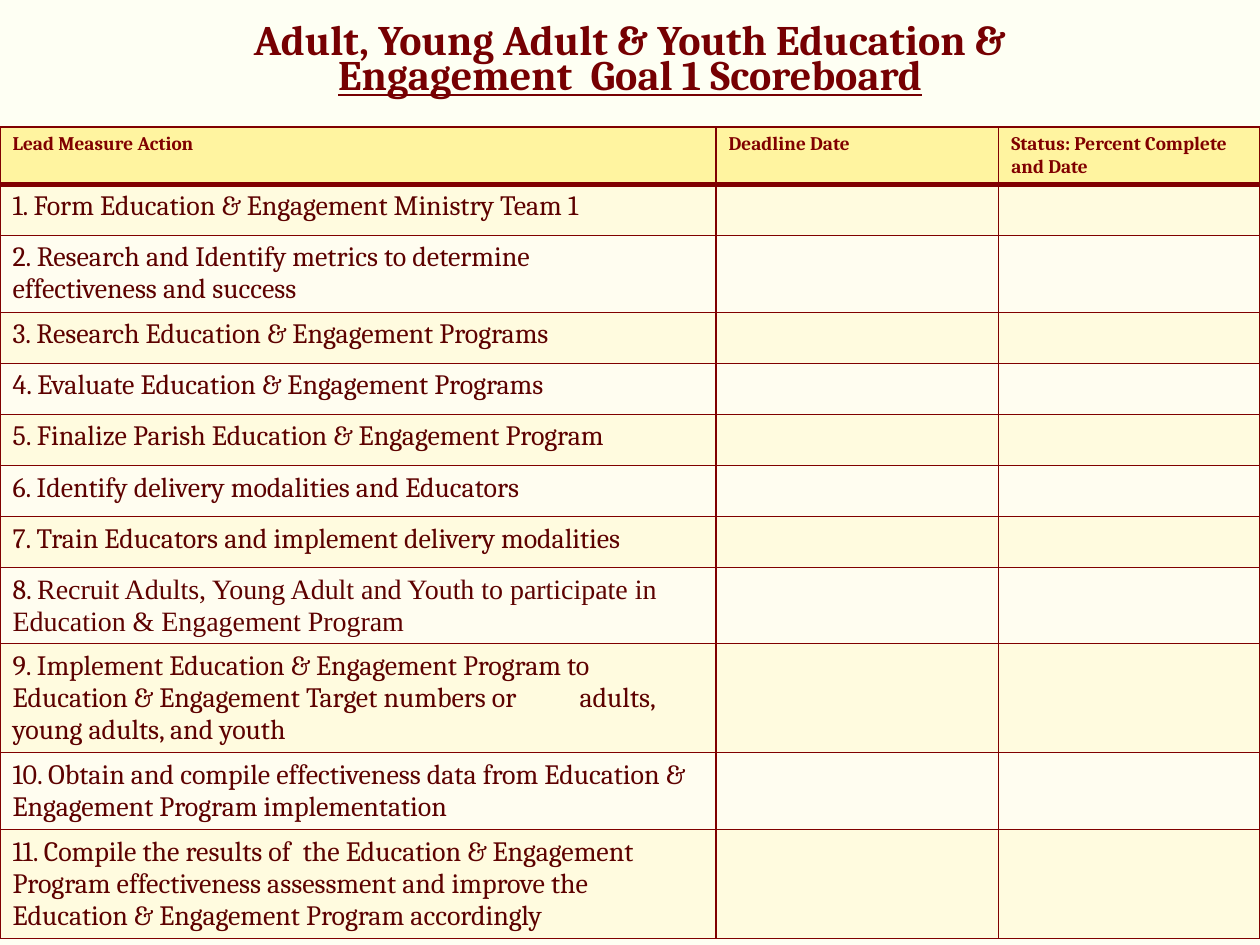
from lxml.etree import SubElement as Sub
from pptx import Presentation
from pptx.dml.color import RGBColor
from pptx.enum.text import MSO_ANCHOR as Anchor, MSO_AUTO_SIZE as Auto, PP_ALIGN as Align
from pptx.oxml.ns import qn
from pptx.util import Pt

FONT = "Cambria"
HEADS = ["Lead Measure Action", "Deadline Date", "Status: Percent Complete and Date"]
# Each action: its text and its tab stops in points
ACTIONS = [
    ("1. Form Education & Engagement Ministry Team 1", []),
    ("2. Research and Identify metrics to determine \teffectiveness and success", [36.7]),
    ("3. Research Education & Engagement Programs", []),
    ("4. Evaluate Education & Engagement Programs", []),
    ("5. Finalize Parish Education & Engagement Program", []),
    ("6. Identify delivery modalities and Educators", []),
    ("7. Train Educators and implement delivery modalities", []),
    ("8. |Recruit Adults, Young Adult and Youth to participate in "
     "\tEducation & Engagement Program", [36.7]),
    ("9. Implement Education & Engagement Program to "
     "\tEducation & Engagement Target numbers or \tadults, young adults, and youth", [36.7]),
    ("10. Obtain and compile effectiveness data from Education & "
     "\tEngagement Program implementation", [36.7, 49.7]),
    ("11. Compile the results of  the Education & Engagement "
     "\tProgram effectiveness assessment and improve the "
     "\tEducation & Engagement Program accordingly", [36.7, 49.7]),
]


def rgb(code):
    return RGBColor.from_string(code)


def style(cell, fill, base):
    props = cell._tc.get_or_add_tcPr()
    for side, width in (("L", 1), ("R", 1), ("T", 1), ("B", base)):
        line = Sub(props, qn(f"a:ln{side}"), w=str(Pt(width)))
        Sub(Sub(line, qn("a:solidFill")), qn("a:srgbClr"), val="800000")
    cell.fill.solid()
    cell.fill.fore_color.rgb = rgb(fill)


prs = Presentation()
prs.slide_width, prs.slide_height = Pt(720), Pt(540)
slide = prs.slides.add_slide(prs.slide_layouts[5])
slide.background.fill.solid()
slide.background.fill.fore_color.rgb = rgb("FEFFF3")

# Title
title = slide.shapes.title
title.left, title.top, title.width, title.height = Pt(77), Pt(-9.4), Pt(566), Pt(90)
frame = title.text_frame
frame.word_wrap = True
frame.auto_size = Auto.NONE
frame.vertical_anchor = Anchor.MIDDLE
para = frame.paragraphs[0]
para.alignment = Align.CENTER
para.line_spacing = 0.7
for text, under in (("Adult, Young Adult & Youth Education & ", False),
                    ("Engagement  Goal 1 Scoreboard", True)):
    run = para.add_run()
    run.text = text
    font = run.font
    font.name, font.size, font.bold = FONT, Pt(24), True
    font.color.rgb = rgb("760002")
    if under:
        font.underline = True

# Table grid
table = slide.shapes.add_table(len(ACTIONS) + 1, 3, 0, Pt(72.6), Pt(720), Pt(339.2)).table
for col, width in zip(table.columns, (409.2, 161.5, 149.3)):
    col.width = Pt(width)
for row in table.rows:
    row.height = Pt(29.2)
table.rows[0].height = Pt(18)

# Header row
for col, text in enumerate(HEADS):
    cell = table.cell(0, col)
    style(cell, "FFF4A0", 3)
    cell.text = text
    font = cell.text_frame.paragraphs[0].font
    font.name, font.size, font.bold = FONT, Pt(11), True
    font.color.rgb = rgb("800000")

# Action rows
for num, (text, stops) in enumerate(ACTIONS, 1):
    for col in range(3):
        style(table.cell(num, col), "FFFBDF" if num % 2 else "FFFDF0", 1)
    para = table.cell(num, 0).text_frame.paragraphs[0]
    if stops:
        tabs = Sub(para._p.get_or_add_pPr(), qn("a:tabLst"))
        for stop in stops:
            Sub(tabs, qn("a:tab"), pos=str(Pt(stop)), algn="l")
    font = para.font
    font.size, font.bold = Pt(16), False
    font.color.rgb = rgb("5D0100")
    for part, name in zip(text.split("|"), (FONT, "Times New Roman")):
        run = para.add_run()
        run.text = part
        run.font.name = name

prs.save("out.pptx")
